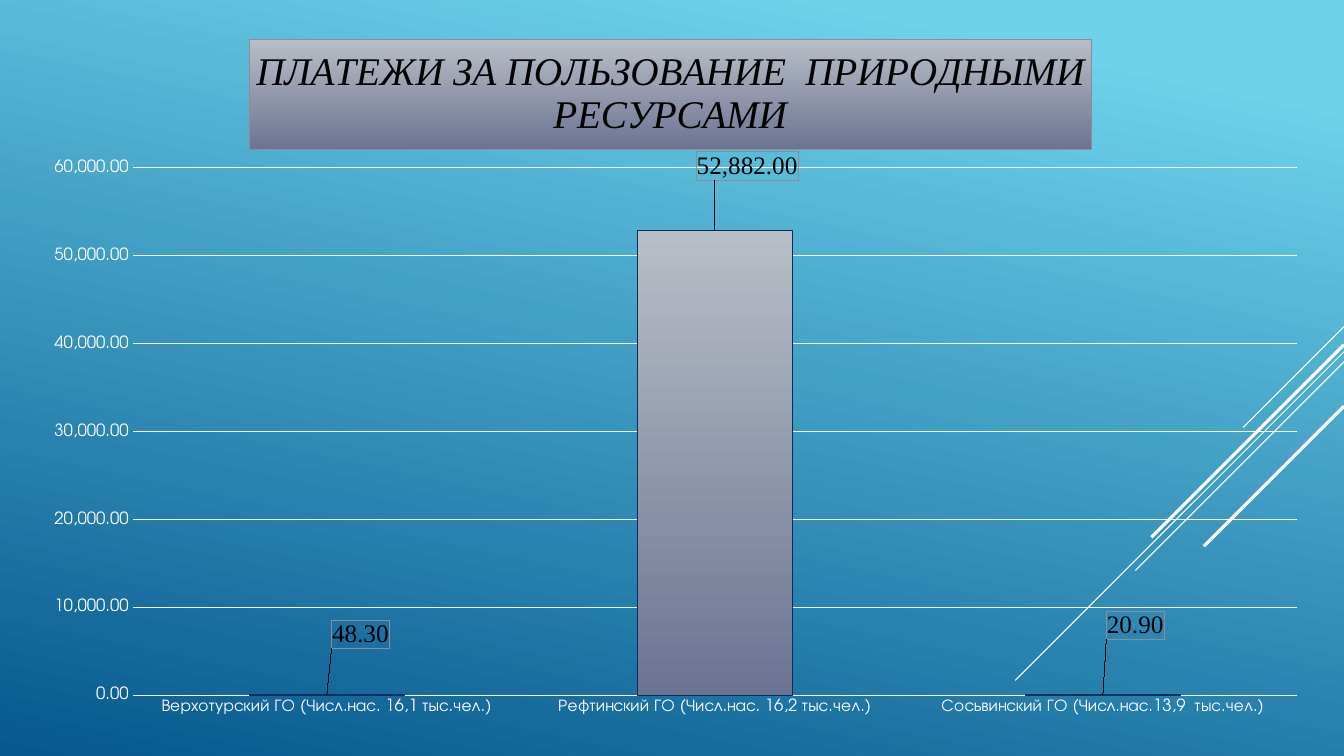
from dataclasses import dataclass

from pptx import Presentation
from pptx.chart.data import CategoryChartData
from pptx.dml.color import RGBColor
from pptx.enum.chart import XL_CHART_TYPE, XL_LABEL_POSITION, XL_TICK_MARK
from pptx.enum.shapes import MSO_CONNECTOR
from pptx.oxml import parse_xml
from pptx.oxml.ns import nsdecls
from pptx.util import Inches, Pt


@dataclass(frozen=True)
class Theme:
    white: str = "FFFFFF"
    black: str = "000000"
    outline: str = "052E5F"
    label_border: str = "8C8C9B"
    background: tuple = ((0.1, "6ED2EB"), (1, "06588E"))
    metal: tuple = ((0, "B8BEC6"), (1, "6C7493"))
    body_font: str = "TeX Gyre Adventor"
    accent_font: str = "Times New Roman"
    title_size: float = 28
    label_size: float = 18
    axis_size: float = 12
    base_size: float = 10
    thin: float = 0.75
    thick: float = 2.25
    number_format: str = "#,##0.00"


THEME = Theme()
WIDTH, HEIGHT = 13.33, 7.5
TITLE = "ПЛАТЕЖИ ЗА ПОЛЬЗОВАНИЕ  ПРИРОДНЫМИ РЕСУРСАМИ"
PAYMENTS = (
    ("Верхотурский ГО (Числ.нас. 16,1 тыс.чел.)", 48.3, (0.026, -0.059)),
    ("Рефтинский ГО (Числ.нас. 16,2 тыс.чел.)", 52882, (0.025, -0.065)),
    ("Сосьвинский ГО (Числ.нас.13,9  тыс.чел.)", 20.9, (0.025, -0.072)),
)
RAYS = (
    (3.24, 1, THEME.thin),
    (3.49, 3.26, THEME.thin),
    (3.59, 2.07, THEME.thin),
    (3.42, 1.91, THEME.thick),
    (4.03, 1.39, THEME.thick),
)


def color(value):
    return RGBColor.from_string(value)


def fill_gradient(fill, stops, clockwise_angle):
    fill.gradient()
    fill.gradient_angle = 360 - clockwise_angle
    for stop, (position, value) in zip(fill.gradient_stops, stops):
        stop.position = position
        stop.color.rgb = color(value)


def set_line(line, value, width):
    line.color.rgb = color(value)
    line.width = Pt(width)


def set_font(font, name, size, value):
    font.name = name
    font.size = Pt(size)
    font.color.rgb = color(value)


def manual_layout(x, y, width=None, height=None, inner=False):
    parts = []
    if inner:
        parts.append('<c:layoutTarget val="inner"/>')
    if inner or width == 0:
        parts.append('<c:xMode val="edge"/><c:yMode val="edge"/>')
    parts.append(f'<c:x val="{x}"/><c:y val="{y}"/>')
    if width:
        parts.append(f'<c:w val="{width}"/><c:h val="{height}"/>')
    body = "".join(parts)
    return parse_xml(
        f'<c:layout {nsdecls("c")}><c:manualLayout>{body}</c:manualLayout></c:layout>'
    )


def replace_layout(parent, anchor, layout):
    for old in parent.xpath("./c:layout"):
        parent.remove(old)
    if anchor is None:
        parent.insert(0, layout)
    else:
        anchor.addnext(layout)


def draw_rays(page):
    for top, reach, width in RAYS:
        ray = page.shapes.add_connector(
            MSO_CONNECTOR.STRAIGHT,
            Inches(WIDTH), Inches(top), Inches(WIDTH - reach), Inches(top + reach),
        )
        set_line(ray.line, THEME.white, width)
        ray.element.spPr.append(parse_xml(f'<a:effectLst {nsdecls("a")}/>'))


def style_title(chart):
    chart.has_title = True
    title = chart.chart_title
    title.include_in_layout = False
    para = title.text_frame.paragraphs[0]
    span = para.add_run()
    span.text = TITLE
    set_font(span.font, THEME.accent_font, THEME.title_size, THEME.black)
    span.font.italic = True
    span.font.bold = False
    fill_gradient(title.format.fill, THEME.metal, 90)
    set_line(title.format.line, THEME.label_border, THEME.thin)
    element = chart.element.xpath(".//c:chart/c:title")[0]
    replace_layout(element, element.xpath("./c:tx")[0], manual_layout(0.17, 0.03, 0))


def style_axes(chart):
    for axis in (chart.category_axis, chart.value_axis):
        axis.major_tick_mark = XL_TICK_MARK.NONE
        axis.minor_tick_mark = XL_TICK_MARK.NONE
        axis.format.line.fill.background()
        set_font(axis.tick_labels.font, THEME.body_font, THEME.axis_size, THEME.white)
    scale = chart.value_axis
    scale.minimum_scale, scale.maximum_scale, scale.major_unit = 0, 60000, 10000
    scale.has_major_gridlines = True
    set_line(scale.major_gridlines.format.line, THEME.white, THEME.thin)
    scale.tick_labels.number_format = THEME.number_format
    scale.tick_labels.number_format_is_linked = False


def style_labels(chart, series):
    for index in range(len(PAYMENTS)):
        label = series.points[index].data_label
        set_font(label.font, THEME.accent_font, THEME.label_size, THEME.black)
        label.position = XL_LABEL_POSITION.OUTSIDE_END
    for element, (_, _, offset) in zip(chart.element.xpath(".//c:dLbl"), PAYMENTS):
        replace_layout(element, element.xpath("./c:idx")[0], manual_layout(*offset))
        for old in element.xpath("./c:spPr"):
            element.remove(old)
        text = element.xpath("./c:txPr")[0]
        text.addprevious(parse_xml(
            f'<c:numFmt {nsdecls("c")} formatCode="{THEME.number_format}" sourceLinked="0"/>'
        ))
        text.addprevious(parse_xml(
            f'<c:spPr {nsdecls("c", "a")}><a:noFill/><a:ln w="{Pt(THEME.thin)}"><a:solidFill>'
            f'<a:srgbClr val="{THEME.label_border}"/></a:solidFill></a:ln></c:spPr>'
        ))


def draw_chart(page, left, top, width, height):
    data = CategoryChartData(number_format=THEME.number_format)
    data.categories = [name for name, _, _ in PAYMENTS]
    data.add_series("Series 1", [value for _, value, _ in PAYMENTS])
    chart = page.shapes.add_chart(
        XL_CHART_TYPE.COLUMN_CLUSTERED,
        Inches(left), Inches(top), Inches(width), Inches(height), data,
    ).chart
    chart.has_legend = False
    set_font(chart.font, THEME.body_font, THEME.base_size, THEME.white)
    plot = chart.plots[0]
    plot.gap_width = 150
    plot.vary_by_categories = False
    series = plot.series[0]
    fill_gradient(series.format.fill, THEME.metal, 90)
    set_line(series.format.line, THEME.outline, THEME.thin)
    style_title(chart)
    style_axes(chart)
    style_labels(chart, series)
    area = chart.element.xpath(".//c:plotArea")[0]
    replace_layout(area, None, manual_layout(0.08, 0.21, 0.9, 0.74, inner=True))


def main():
    deck = Presentation()
    deck.slide_width, deck.slide_height = Inches(WIDTH), Inches(HEIGHT)
    page = deck.slides.add_slide(deck.slide_layouts[6])
    fill_gradient(page.background.fill, THEME.background, 102)
    draw_rays(page)
    draw_chart(page, 0.29, 0.18, 12.83, 7.07)
    deck.save("out.pptx")


if __name__ == "__main__":
    main()
